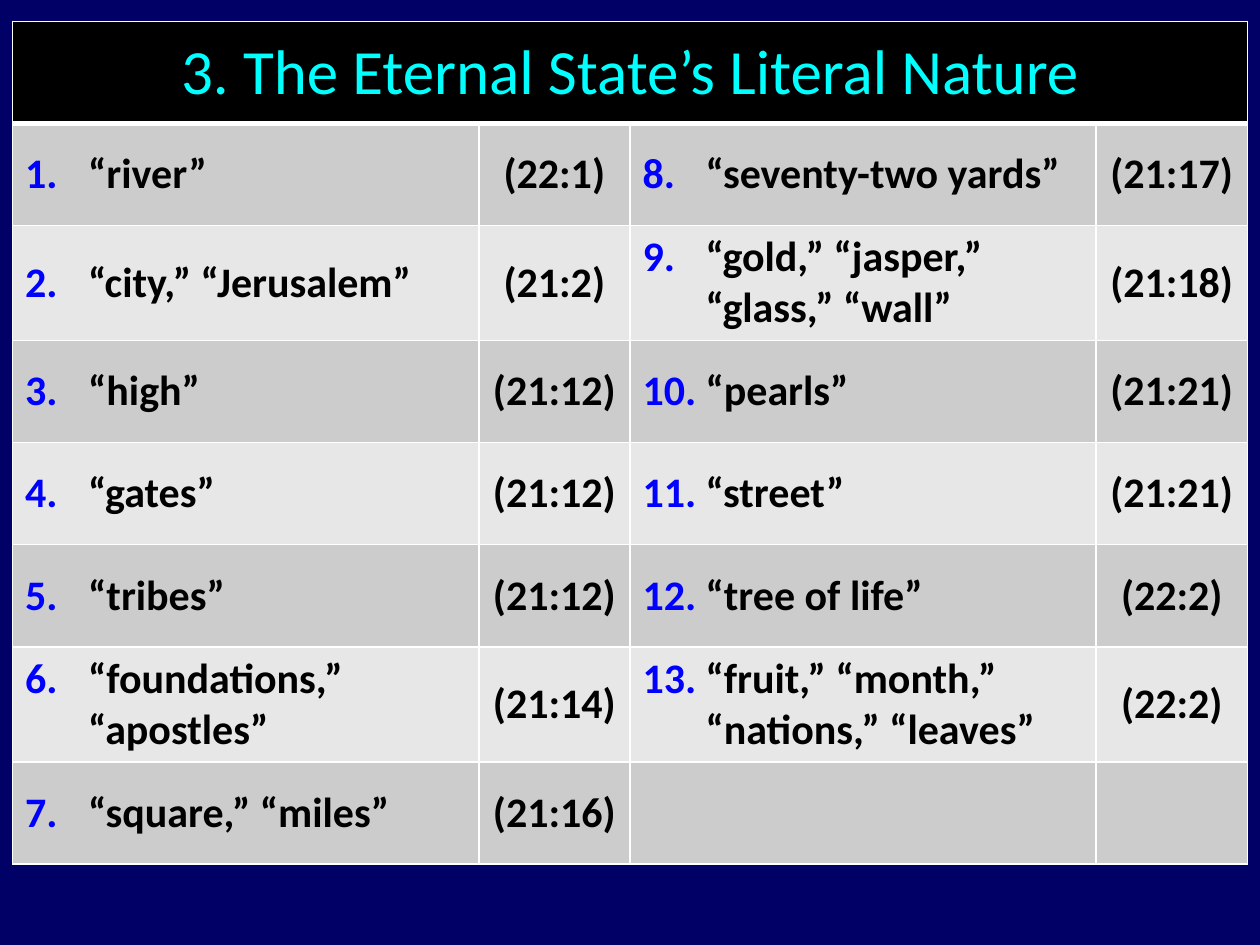
import lxml.etree
import pptx
import pptx.dml.color
import pptx.enum.text
import pptx.oxml.ns
import pptx.util

WIDTH, HEIGHT = 10, 7.5
TITLE = "3. The Eternal State’s Literal Nature"
ENTRIES = [
    ("“river”", "(22:1)"),
    ("“city,” “Jerusalem”", "(21:2)"),
    ("“high”", "(21:12)"),
    ("“gates”", "(21:12)"),
    ("“tribes”", "(21:12)"),
    ("“foundations,” “apostles”", "(21:14)"),
    ("“square,” “miles”", "(21:16)"),
    ("“seventy-two yards”", "(21:17)"),
    ("“gold,” “jasper,” “glass,” “wall”", "(21:18)"),
    ("“pearls”", "(21:21)"),
    ("“street”", "(21:21)"),
    ("“tree of life”", "(22:2)"),
    ("“fruit,” “month,” “nations,” “leaves”", "(22:2)"),
]
ENTRY_ROWS = 7
COLUMN_WIDTHS = [3.7, 1.2, 3.7, 1.2]
BANDS = ["CCCCCC", "E7E7E7"]
ALIGN = pptx.enum.text.PP_ALIGN


def color(hex_string):
    return pptx.dml.color.RGBColor.from_string(hex_string)


def add_element(parent, tag, **attributes):
    element = lxml.etree.SubElement(parent, pptx.oxml.ns.qn(tag))
    for name, value in attributes.items():
        element.set(name, str(value))
    return element


def add_number(paragraph, number, number_color):
    """Number the paragraph automatically, with a hanging indent."""
    properties = paragraph._p.get_or_add_pPr()
    indent = pptx.util.Inches(0.5)
    properties.set("marL", str(indent))
    properties.set("indent", str(-indent))
    add_element(add_element(properties, "a:buClr"), "a:srgbClr", val=number_color)
    add_element(properties, "a:buFont", typeface="+mj-lt")
    add_element(properties, "a:buAutoNum", type="arabicPeriod", startAt=number)


def write(cell, text, size=24, bold=True, text_color="000000", align=ALIGN.CENTER, number=None):
    paragraph = cell.text_frame.paragraphs[0]
    paragraph.alignment = align
    if number:
        add_number(paragraph, number, "0000FF")
    run = paragraph.add_run()
    run.text = text
    run.font.name = "Calibri"
    run.font.size = pptx.util.Pt(size)
    run.font.bold = bold
    run.font.color.rgb = color(text_color)


def style_cell(cell, fill, top=1, bottom=1):
    """Set borders (before the fill, as the schema orders them), fill and anchor."""
    properties = cell._tc.get_or_add_tcPr()
    for side, points in (("L", 1), ("R", 1), ("T", top), ("B", bottom)):
        line = add_element(properties, f"a:ln{side}", w=pptx.util.Pt(points))
        add_element(add_element(line, "a:solidFill"), "a:srgbClr", val="FFFFFF")
    cell.fill.solid()
    cell.fill.fore_color.rgb = color(fill)
    cell.vertical_anchor = pptx.enum.text.MSO_ANCHOR.MIDDLE


def add_verse_table(slide, left, top, width, height):
    rows = ENTRY_ROWS + 1
    frame = slide.shapes.add_table(
        rows, len(COLUMN_WIDTHS), *map(pptx.util.Inches, (left, top, width, height)))
    table = frame.table
    for column, share in zip(table.columns, COLUMN_WIDTHS):
        column.width = pptx.util.Inches(width * share / sum(COLUMN_WIDTHS))
    for row in table.rows:
        row.height = pptx.util.Inches(height / rows)

    # Heading across all columns
    for cell in table.rows[0].cells:
        style_cell(cell, "000000", bottom=3)
    table.cell(0, 0).merge(table.cell(0, len(COLUMN_WIDTHS) - 1))
    write(table.cell(0, 0), TITLE, size=36, bold=False, text_color="00FFFF")

    # Banded body
    for row in range(1, rows):
        for cell in table.rows[row].cells:
            style_cell(cell, BANDS[(row - 1) % 2], top=3 if row == 1 else 1)

    # Numbered entries run down the left pair of columns, then the right
    for index, (phrase, verse) in enumerate(ENTRIES):
        pair, row = divmod(index, ENTRY_ROWS)
        write(table.cell(row + 1, 2 * pair), phrase, align=ALIGN.LEFT, number=index + 1)
        write(table.cell(row + 1, 2 * pair + 1), verse)


def main():
    presentation = pptx.Presentation()
    presentation.slide_width = pptx.util.Inches(WIDTH)
    presentation.slide_height = pptx.util.Inches(HEIGHT)
    slide = presentation.slides.add_slide(presentation.slide_layouts[6])
    slide.background.fill.solid()
    slide.background.fill.fore_color.rgb = color("000066")
    add_verse_table(slide, 0.01 * WIDTH, 0.17, 0.98 * WIDTH, 6.48)
    presentation.save("out.pptx")


if __name__ == "__main__":
    main()
